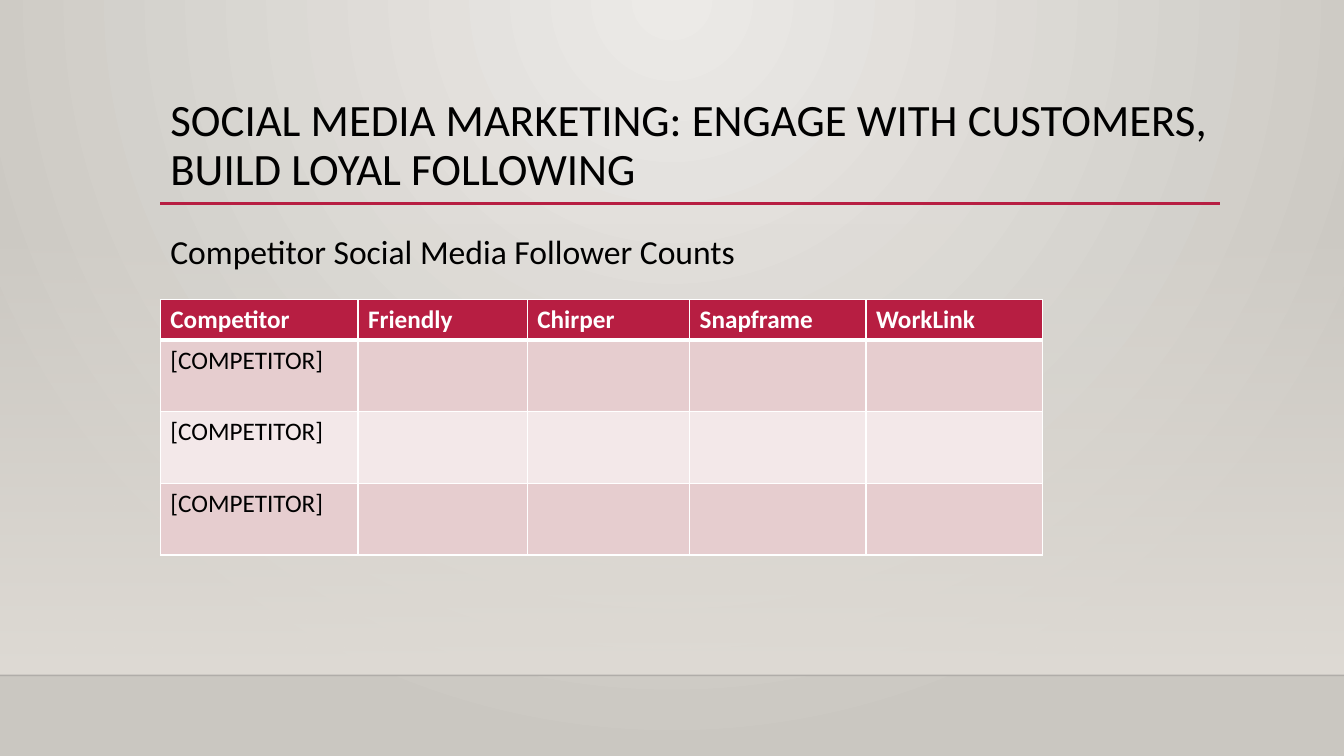
from lxml.etree import SubElement
from pptx import Presentation
from pptx.dml.color import RGBColor
from pptx.enum.shapes import MSO_CONNECTOR, MSO_SHAPE
from pptx.enum.text import MSO_ANCHOR, MSO_AUTO_SIZE, PP_ALIGN
from pptx.oxml.ns import qn
from pptx.util import Inches, Pt

COLORS = {
    "light": "ECEAE7", "dark": "CAC7C1", "floor": "DFDBD5", "edge": "000001",
    "accent": "B71E42", "text": "000000", "white": "FFFFFF",
    "odd": "E6CDCF", "even": "F3E8E9",
}
WIDTH = 13.33
LEFT = 1.59
HEADS = ["Competitor", "Friendly", "Chirper", "Snapframe", "WorkLink"]
COLS = [1.96, 1.68, 1.61, 1.75, 1.75]
ROWS = [0.4] + [0.71] * 3


def rgb(name):
    return RGBColor.from_string(COLORS[name])


def fade(color, percent):
    """Set the opacity of a colour element."""
    SubElement(color, qn("a:alpha"), val=str(percent * 1000))


class Board:
    """Holds the text style and the slide being built."""

    def __init__(self, deck):
        self.slide = deck.slides.add_slide(deck.slide_layouts[5])
        self.shapes = self.slide.shapes
        self.font = {"name": "Calibri", "bold": False}

    def blend(self, fill, start, end):
        fill.gradient()
        for stop, name in zip(fill.gradient_stops, (start, end)):
            stop.color.rgb = rgb(name)

    def back(self):
        """Fill the background with a circular glow from the top centre."""
        self.blend(self.slide.background.fill, "light", "dark")
        grad = self.slide.element.find(".//" + qn("a:gradFill"))
        grad.remove(grad.find(qn("a:lin")))
        glow = SubElement(grad, qn("a:path"), {"path": "circle"})
        SubElement(glow, qn("a:fillToRect"), l="43000", t="0", r="43000", b="100000")

    def haze(self, top, height):
        """Add a full-width band that fades in downwards."""
        band = self.shapes.add_shape(
            MSO_SHAPE.RECTANGLE, 0, Inches(top), Inches(WIDTH), Inches(height))
        band.shadow.inherit = False
        band.line.fill.background()
        self.blend(band.fill, "floor", "floor")
        band.fill.gradient_angle = 270
        fade(band.element.find(".//" + qn("a:srgbClr")), 0)

    def rule(self, left, right, top, color, width, alpha=100):
        line = self.shapes.add_connector(
            MSO_CONNECTOR.STRAIGHT, Inches(left), Inches(top), Inches(right), Inches(top))
        line.line.color.rgb = rgb(color)
        line.line.width = Pt(width)
        if alpha < 100:
            fade(line.element.find(".//" + qn("a:srgbClr")), alpha)
        SubElement(line.element.spPr, qn("a:effectLst"))

    def put(self, frame, text, size, color="text", **extra):
        """Fill a text frame and return its styled paragraph."""
        frame.text = text
        para = frame.paragraphs[0]
        para.alignment = PP_ALIGN.LEFT
        for key, value in {**self.font, "size": Pt(size), **extra}.items():
            setattr(para.font, key, value)
        para.font.color.rgb = rgb(color)
        return para

    def place(self, shape, *box):
        shape.left, shape.top, shape.width, shape.height = map(Inches, box)

    def title(self, text, *box):
        shape = self.shapes.title
        self.place(shape, *box)
        frame = shape.text_frame
        self.put(frame, text, 32).line_spacing = 0.9
        style = {"word_wrap": True, "auto_size": MSO_AUTO_SIZE.NONE,
                 "vertical_anchor": MSO_ANCHOR.MIDDLE}
        for key, value in style.items():
            setattr(frame, key, value)

    def label(self, text, *box):
        frame = self.shapes.add_textbox(*map(Inches, box)).text_frame
        frame.word_wrap = True
        frame.auto_size = MSO_AUTO_SIZE.SHAPE_TO_FIT_TEXT
        self.put(frame, text, 24)

    def edge(self, cell, side, width):
        props = cell._tc.get_or_add_tcPr()
        line = SubElement(props, qn("a:ln" + side), w=str(Pt(width)))
        fill = SubElement(line, qn("a:solidFill"))
        SubElement(fill, qn("a:srgbClr"), val=COLORS["white"])

    def table(self, data, left, top):
        grid = self.shapes.add_table(
            len(ROWS), len(COLS), Inches(left), Inches(top),
            Inches(sum(COLS)), Inches(sum(ROWS))).table
        for col, width in zip(grid.columns, COLS):
            col.width = Inches(width)
        for r, (row, height) in enumerate(zip(grid.rows, ROWS)):
            row.height = Inches(height)
            shade = "accent" if r == 0 else "odd" if r % 2 else "even"
            for cell, text in zip(row.cells, data[r]):
                for side in "LRTB":
                    thick = (r, side) in ((0, "B"), (1, "T"))
                    self.edge(cell, side, 3 if thick else 1)
                cell.fill.solid()
                cell.fill.fore_color.rgb = rgb(shade)
                self.put(cell.text_frame, text, 18,
                         "text" if r else "white", bold=r == 0)


def main():
    deck = Presentation()
    deck.slide_width, deck.slide_height = Inches(WIDTH), Inches(7.5)
    board = Board(deck)
    board.back()
    board.haze(2.21, 4.49)
    board.rule(0, WIDTH, 6.7, "edge", 1, 20)
    board.rule(LEFT, 12.1, 2.02, "accent", 2.5)
    board.title("SOCIAL MEDIA MARKETING: ENGAGE WITH CUSTOMERS, BUILD LOYAL FOLLOWING",
                LEFT, 0.88, 10.5, 1.15)
    blank = ["[COMPETITOR]"] + [""] * (len(COLS) - 1)
    board.table([HEADS] + [blank] * 3, LEFT, 2.97)
    board.label("Competitor Social Media Follower Counts", LEFT, 2.24, 6.49, 0.5)
    deck.save("out.pptx")


if __name__ == "__main__":
    main()
